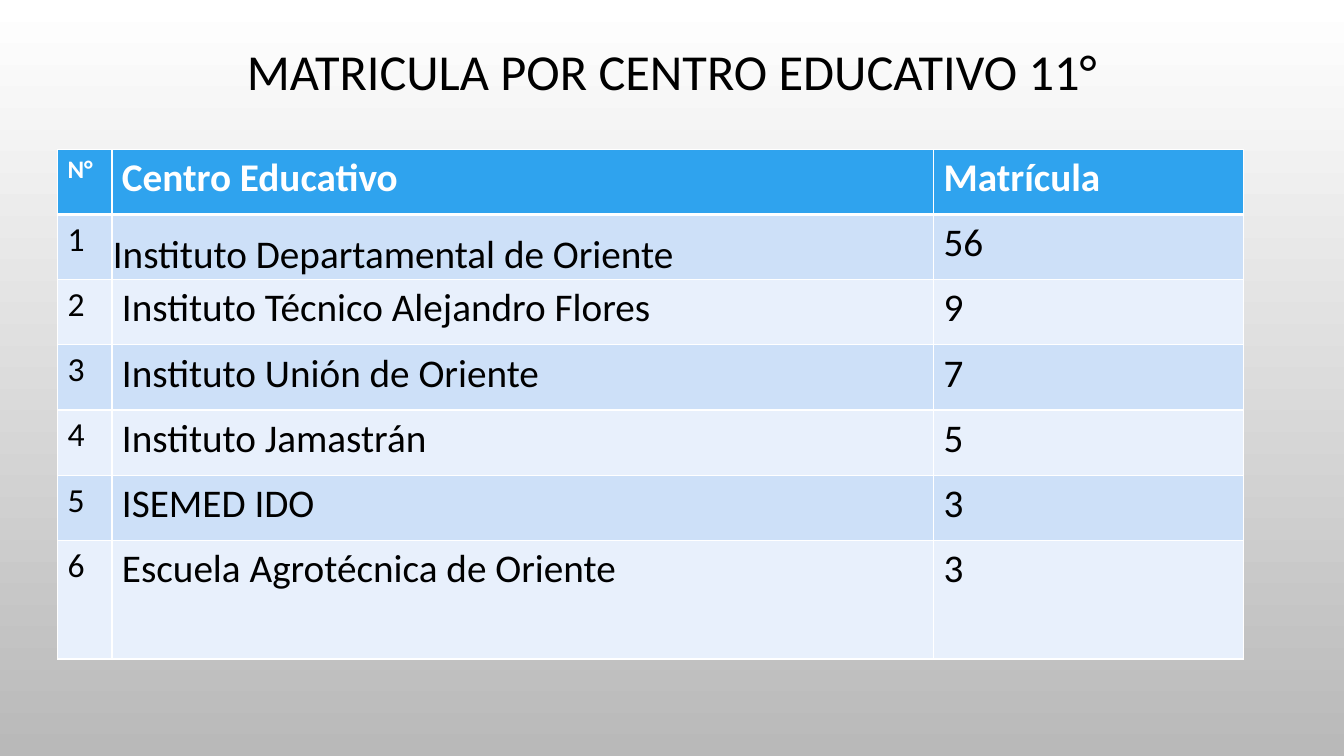
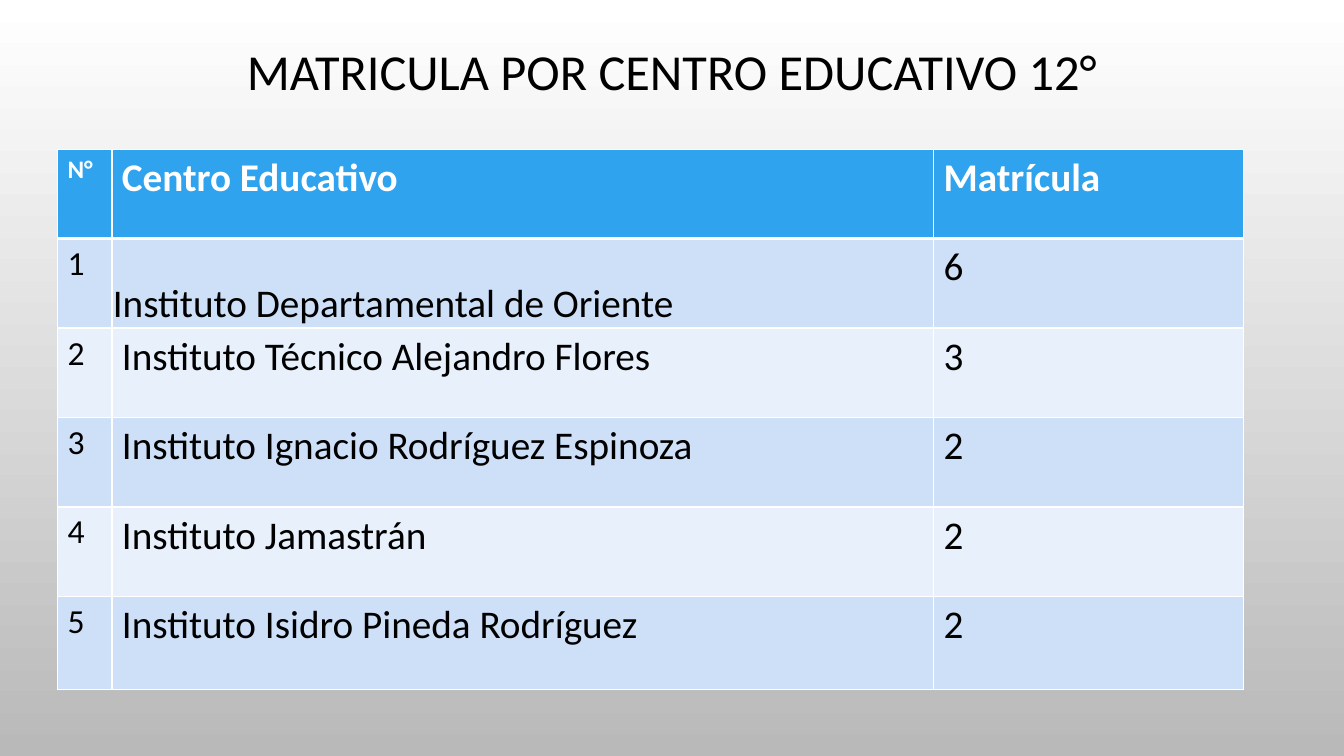
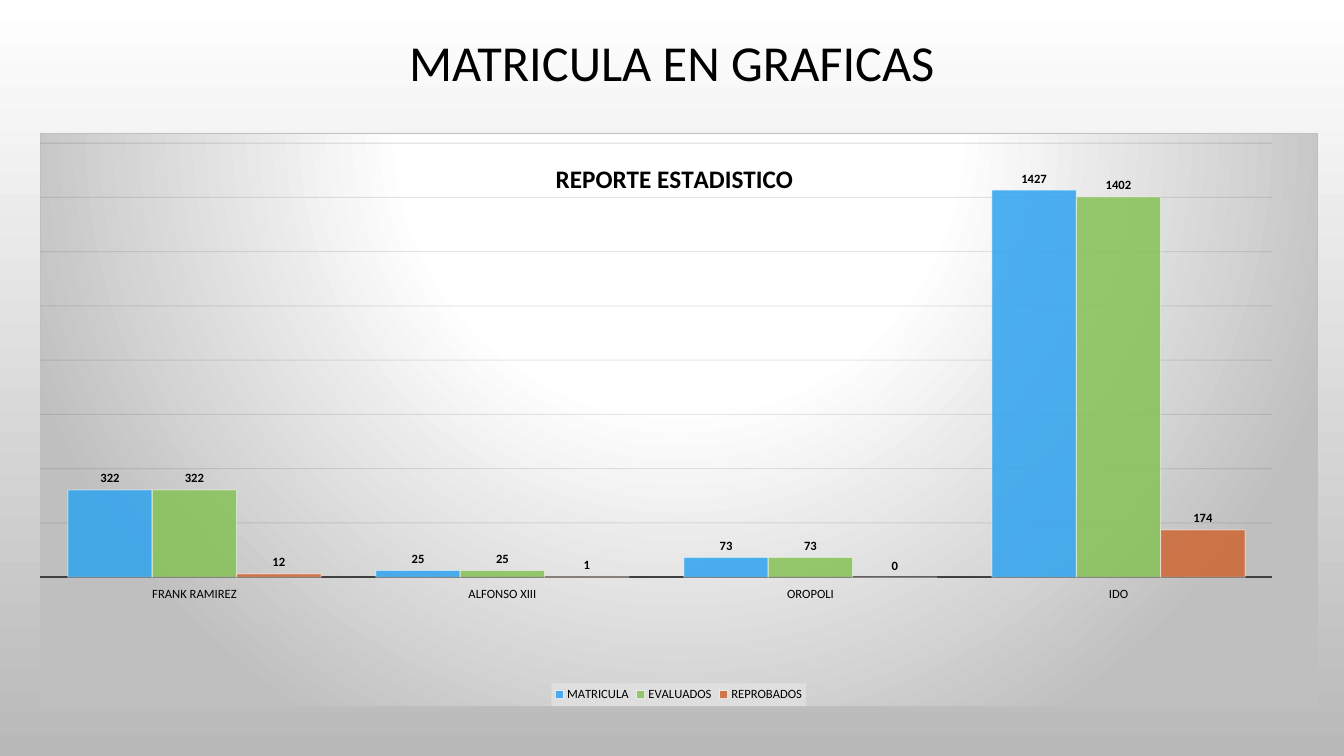
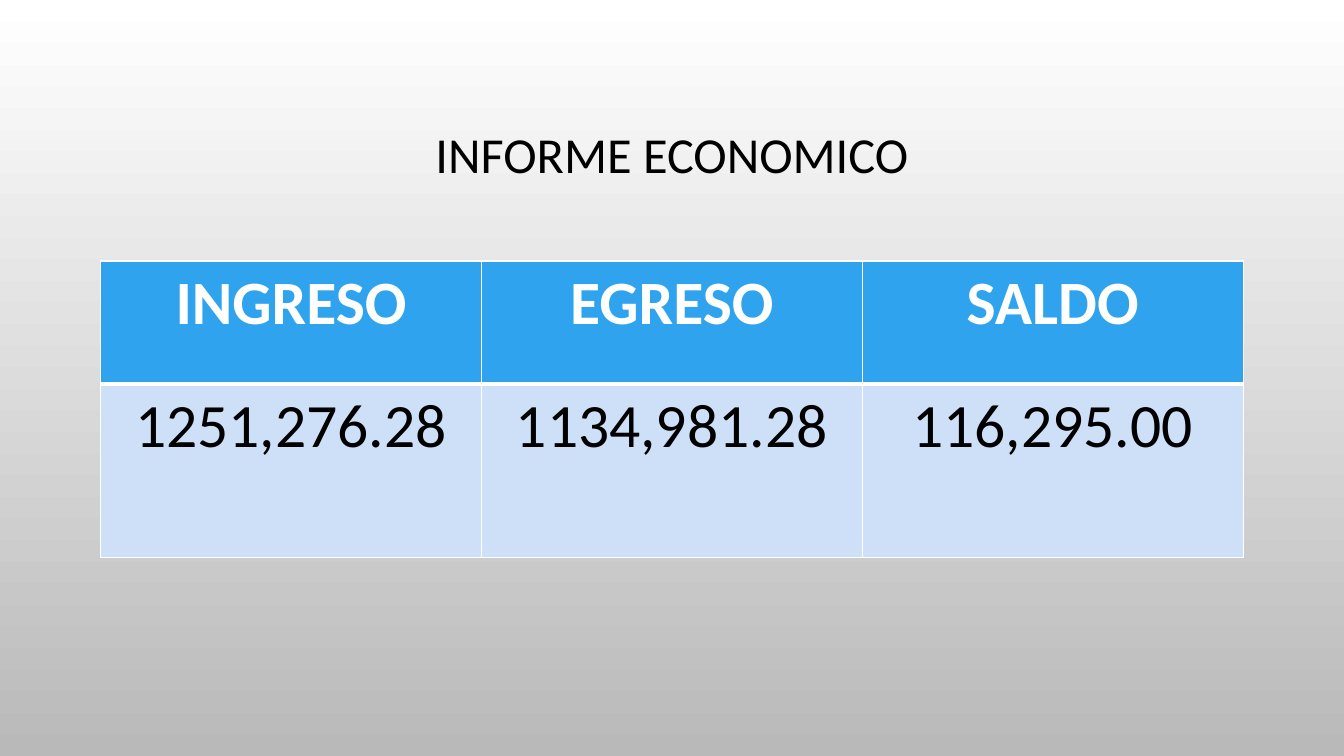
from lxml import etree
from pptx import Presentation
from pptx.chart.data import CategoryChartData
from pptx.dml.color import RGBColor
from pptx.enum.chart import (XL_CHART_TYPE, XL_LABEL_POSITION,
                             XL_LEGEND_POSITION, XL_TICK_LABEL_POSITION,
                             XL_TICK_MARK)
from pptx.enum.text import MSO_ANCHOR, MSO_AUTO_SIZE, PP_ALIGN
from pptx.oxml import parse_xml
from pptx.oxml.ns import nsdecls, qn
from pptx.util import Inches, Pt

CLUSTERED = XL_CHART_TYPE.COLUMN_CLUSTERED
OUTSIDE = XL_LABEL_POSITION.OUTSIDE_END
LEGEND_BOTTOM = XL_LEGEND_POSITION.BOTTOM
LABELS_LOW = XL_TICK_LABEL_POSITION.LOW
NO_TICK = XL_TICK_MARK.NONE
LEFT, CENTER = PP_ALIGN.LEFT, PP_ALIGN.CENTER
TOP, MIDDLE, BOTTOM = MSO_ANCHOR.TOP, MSO_ANCHOR.MIDDLE, MSO_ANCHOR.BOTTOM
NO_AUTOFIT = MSO_AUTO_SIZE.NONE

WHITE = RGBColor(0xFF, 0xFF, 0xFF)
BLACK = RGBColor(0, 0, 0)
GRAY = RGBColor(0xB9, 0xB9, 0xB9)
AXIS = RGBColor(0x40, 0x40, 0x40)
GRID = RGBColor(0x0D, 0x0D, 0x0D)
BLUE = RGBColor(0x2F, 0xA3, 0xEE)
GREEN = RGBColor(0x86, 0xC1, 0x57)
ORANGE = RGBColor(0xCE, 0x66, 0x33)
BANDS = (RGBColor(0xCD, 0xE0, 0xF8), RGBColor(0xE8, 0xF0, 0xFC))

FONT = "Calibri"
WIDTH, HEIGHT = Inches(13.333), Inches(7.5)

# Boxes are left, top, width, height in percent of the slide
TITLE_BOX = (7.5, 0, 85, 19.73)
CHART_TITLE_BOX = (7.5, 1.73, 85, 13.87)
REPORT_TITLE_BOX = (7.5, 9.07, 85, 23.33)
CHART_BOX = (2.93, 17.6, 95.12, 75.87)
REPORT_BOX = (7.5, 34.53, 85, 39.2)

ENROLMENT_HEADER = ("N°", "Centro Educativo", "Matrícula")
ENROLMENT_COLUMNS = (0.54, 8.15, 3.07)
GRADE_11 = [("Instituto Departamental de Oriente", 56),
            ("Instituto Técnico Alejandro Flores", 9),
            ("Instituto Unión de Oriente", 7),
            ("Instituto Jamastrán", 5),
            ("ISEMED IDO", 3),
            ("Escuela Agrotécnica de Oriente", 3)]
GRADE_12 = [("Instituto Departamental de Oriente", 6),
            ("Instituto Técnico Alejandro Flores", 3),
            ("Instituto Ignacio Rodríguez Espinoza", 2),
            ("Instituto Jamastrán", 2),
            ("Instituto Isidro Pineda Rodríguez", 2)]
CATEGORIES = ("FRANK RAMIREZ", "ALFONSO XIII", "OROPOLI", "IDO")
SERIES = [("MATRICULA", (322, 25, 73, 1427), BLUE),
          ("EVALUADOS", (322, 25, 73, 1402), GREEN),
          ("REPROBADOS", (12, 1, 0, 174), ORANGE)]
REPORT = [("INGRESO", "EGRESO", "SALDO"),
          ("1251,276.28", "1134,981.28", "116,295.00")]

CHART_FILL = f"""<c:spPr {nsdecls('c', 'a')}><a:gradFill><a:gsLst>
<a:gs pos="0"><a:srgbClr val="FFFFFF"/></a:gs>
<a:gs pos="39000"><a:srgbClr val="FFFFFF"/></a:gs>
<a:gs pos="100000"><a:srgbClr val="BFBFBF"/></a:gs></a:gsLst>
<a:path path="circle">
<a:fillToRect l="50000" t="-80000" r="50000" b="180000"/></a:path></a:gradFill>
<a:ln w="9525"><a:solidFill><a:srgbClr val="BFBFBF"/></a:solidFill></a:ln>
</c:spPr>"""
LEGEND_FILL = f"""<c:spPr {nsdecls('c', 'a')}><a:solidFill>
<a:srgbClr val="F2F2F2"><a:alpha val="39000"/></a:srgbClr></a:solidFill>
</c:spPr>"""


def place(box):
    """Turn a percent box into slide lengths."""
    return [int(share * side / 100)
            for share, side in zip(box, (WIDTH, HEIGHT) * 2)]


def apply_format(obj, **values):
    for name, value in values.items():
        setattr(obj, name, value)


def set_font(font, size, color=BLACK, bold=False):
    apply_format(font, name=FONT, size=Pt(size), bold=bold)
    font.color.rgb = color


def set_alpha(element, *percents):
    """Give the colours inside an element their opacity, in order."""
    for color, percent in zip(element.iter(qn("a:srgbClr")), percents):
        etree.SubElement(color, qn("a:alpha")).set("val", str(percent * 1000))


# Slide frame
def style_master(prs):
    fill = prs.slide_master.background.fill
    fill.gradient()
    fill.gradient_angle = 270
    for stop, color in zip(fill.gradient_stops, (WHITE, GRAY)):
        stop.color.rgb = color


def add_titled_slide(prs, text, box=TITLE_BOX):
    s = prs.slides.add_slide(prs.slide_layouts[5])
    title = s.shapes.title
    title.left, title.top, title.width, title.height = place(box)
    tf = title.text_frame
    tf.text = text
    apply_format(tf, vertical_anchor=MIDDLE, word_wrap=True,
                 auto_size=NO_AUTOFIT)
    p = tf.paragraphs[0]
    apply_format(p, alignment=CENTER, line_spacing=0.9)
    set_font(p.runs[0].font, 36)
    return s


# Tables
def set_borders(cell, **widths):
    tcPr = cell._tc.get_or_add_tcPr()
    for i, side in enumerate("LRTB"):
        tcPr.insert(i, parse_xml(
            f'<a:ln{side} {nsdecls("a")} w="{Pt(widths.get(side, 1))}">'
            f'<a:solidFill><a:srgbClr val="{WHITE}"/></a:solidFill>'
            f'</a:ln{side}>'))


def add_banded_table(s, box, rows, columns, heights, header_sizes, body_sizes,
                     align=LEFT):
    left, top, width, height = place(box)
    table = s.shapes.add_table(len(rows), len(columns),
                               left, top, width, height).table
    for column, share in zip(table.columns, columns):
        column.width = int(width * share / sum(columns))
    for row, share in zip(table.rows, heights):
        row.height = int(height * share / sum(heights))
    for i, texts in enumerate(rows):
        header = i == 0
        for j, text in enumerate(texts):
            cell = table.cell(i, j)
            cell.text = str(text)
            cell.vertical_anchor = TOP
            cell.fill.solid()
            cell.fill.fore_color.rgb = BLUE if header else BANDS[(i - 1) % 2]
            # The rule under the header is thicker
            set_borders(cell, B=3 if header else 1, T=3 if i == 1 else 1)
            p = cell.text_frame.paragraphs[0]
            p.alignment = align
            size = (header_sizes if header else body_sizes)[j]
            set_font(p.runs[0].font, size, WHITE if header else BLACK, header)
    return table


def enrolment_slide(prs, title, schools, table_height, last_row):
    s = add_titled_slide(prs, title)
    rows = [ENROLMENT_HEADER]
    rows += [(n, *school) for n, school in enumerate(schools, 1)]
    table = add_banded_table(s, (4.28, 19.73, 88.22, table_height), rows,
                             ENROLMENT_COLUMNS,
                             [1] * len(schools) + [last_row],
                             (18, 28, 28), (24, 28, 28))
    # The first school sits at the foot of its cell
    edge = Inches(0.01)
    apply_format(table.cell(1, 1), vertical_anchor=BOTTOM, margin_left=edge,
                 margin_right=edge, margin_top=edge, margin_bottom=0)


def report_slide(prs):
    s = add_titled_slide(prs, "INFORME ECONOMICO", REPORT_TITLE_BOX)
    add_banded_table(s, REPORT_BOX, REPORT, (1, 1, 1), (1.22, 1.72),
                     [44] * 3, [44] * 3, CENTER)


# Chart
def set_layout(parent, index, **values):
    """Fix the place of a chart part, in shares of the chart."""
    old = parent.find(qn("c:layout"))
    if old is not None:
        parent.remove(old)
    items = "".join(f'<c:{k} val="{v}"/>' for k, v in values.items())
    parent.insert(index, parse_xml(
        f'<c:layout {nsdecls("c")}><c:manualLayout>{items}'
        f'</c:manualLayout></c:layout>'))


def style_axes(chart):
    axis = chart.category_axis
    apply_format(axis, major_tick_mark=NO_TICK, minor_tick_mark=NO_TICK,
                 tick_label_position=LABELS_LOW)
    set_font(axis.tick_labels.font, 9)
    axis.format.line.color.rgb = AXIS
    axis.format.line.width = Pt(1.5)
    values = chart.value_axis
    apply_format(values, visible=False, has_major_gridlines=True,
                 minimum_scale=0, maximum_scale=1600, major_unit=200)
    line = values.major_gridlines.format.line
    line.color.rgb = GRID
    line.width = Pt(0.75)
    set_alpha(values._element.find(qn("c:majorGridlines")), 10)


def style_series(series, color):
    series.format.fill.solid()
    series.format.fill.fore_color.rgb = color
    series.format.line.color.rgb = WHITE
    series.format.line.width = Pt(0.75)
    set_alpha(series._element.find(qn("c:spPr")), 85, 50)
    labels = series.data_labels
    apply_format(labels, show_value=True, position=OUTSIDE)
    set_font(labels.font, 9, bold=True)


def style_chart_title(chart, text):
    title = chart.chart_title
    title.text_frame.text = text
    set_font(title.text_frame.paragraphs[0].runs[0].font, 18, bold=True)
    set_layout(title._element, 1, xMode="edge", yMode="edge", x=0.4, y=0.04)
    title._element.find(qn("c:overlay")).set("val", "1")


def chart_slide(prs):
    s = add_titled_slide(prs, "MATRICULA EN GRAFICAS", CHART_TITLE_BOX)
    data = CategoryChartData()
    data.categories = CATEGORIES
    for name, values, _ in SERIES:
        data.add_series(name, values)
    chart = s.shapes.add_chart(CLUSTERED, *place(CHART_BOX), data).chart
    set_font(chart.font, 10)
    chart._chartSpace.find(qn("c:txPr")).addprevious(parse_xml(CHART_FILL))
    style_chart_title(chart, "REPORTE ESTADISTICO")
    style_axes(chart)
    plot = chart.plots[0]
    apply_format(plot, gap_width=65, overlap=0, vary_by_categories=False)
    for series, (_, _, color) in zip(plot.series, SERIES):
        style_series(series, color)
    set_layout(chart._chartSpace.chart.plotArea, 0, layoutTarget="inner",
               xMode="edge", yMode="edge", x=0, y=0.017, w=0.965, h=0.758)
    # Legend
    chart.has_legend = True
    legend = chart.legend
    apply_format(legend, position=LEGEND_BOTTOM, include_in_layout=False)
    set_font(legend.font, 9)
    legend._element.find(qn("c:txPr")).addprevious(parse_xml(LEGEND_FILL))


def main():
    prs = Presentation()
    prs.slide_width, prs.slide_height = WIDTH, HEIGHT
    style_master(prs)
    enrolment_slide(prs, "MATRICULA POR CENTRO EDUCATIVO 11°", GRADE_11,
                    67.47, 1.82)
    enrolment_slide(prs, "MATRICULA POR CENTRO EDUCATIVO 12°", GRADE_12,
                    71.47, 1.04)
    chart_slide(prs)
    report_slide(prs)
    prs.save("out.pptx")


if __name__ == "__main__":
    main()
